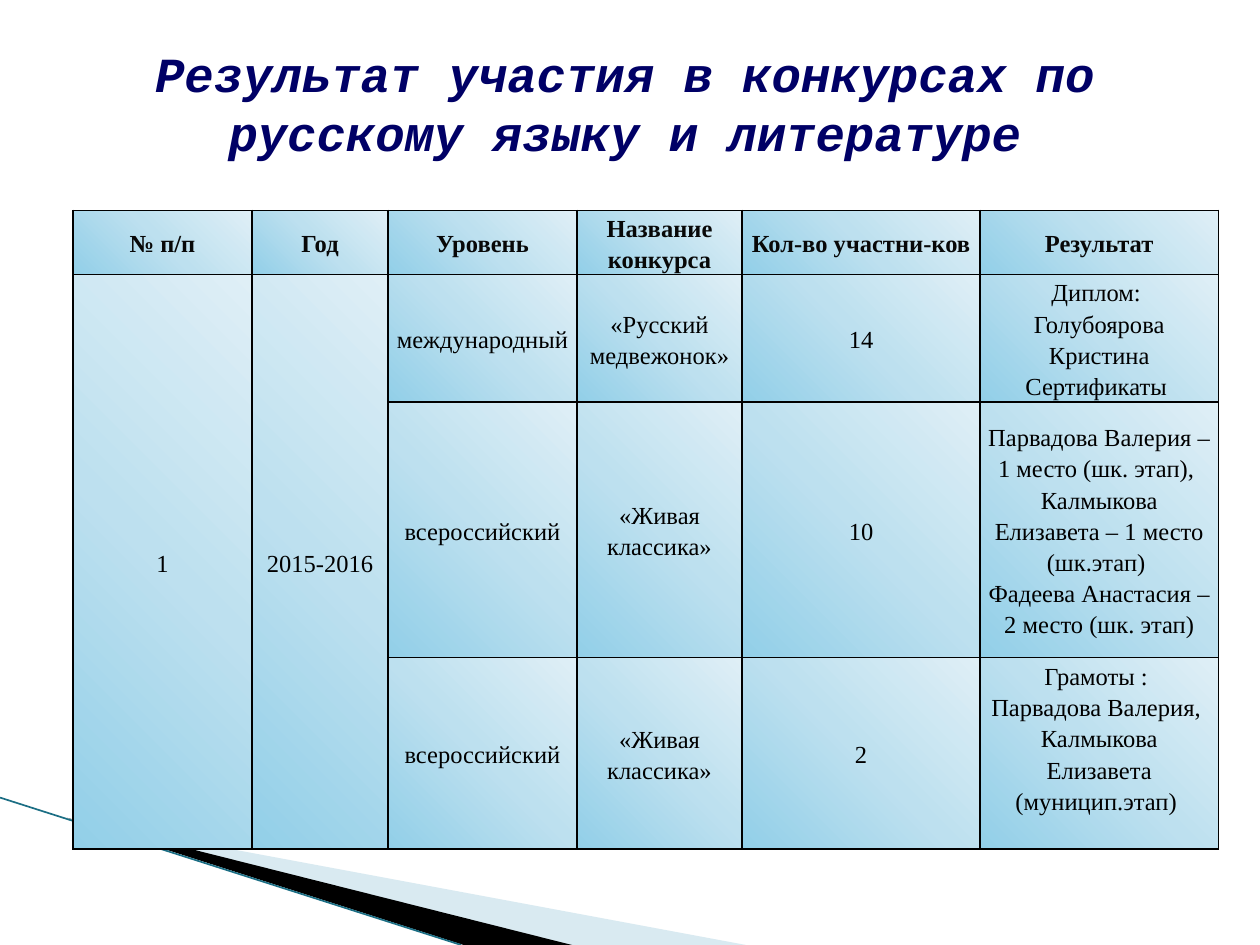
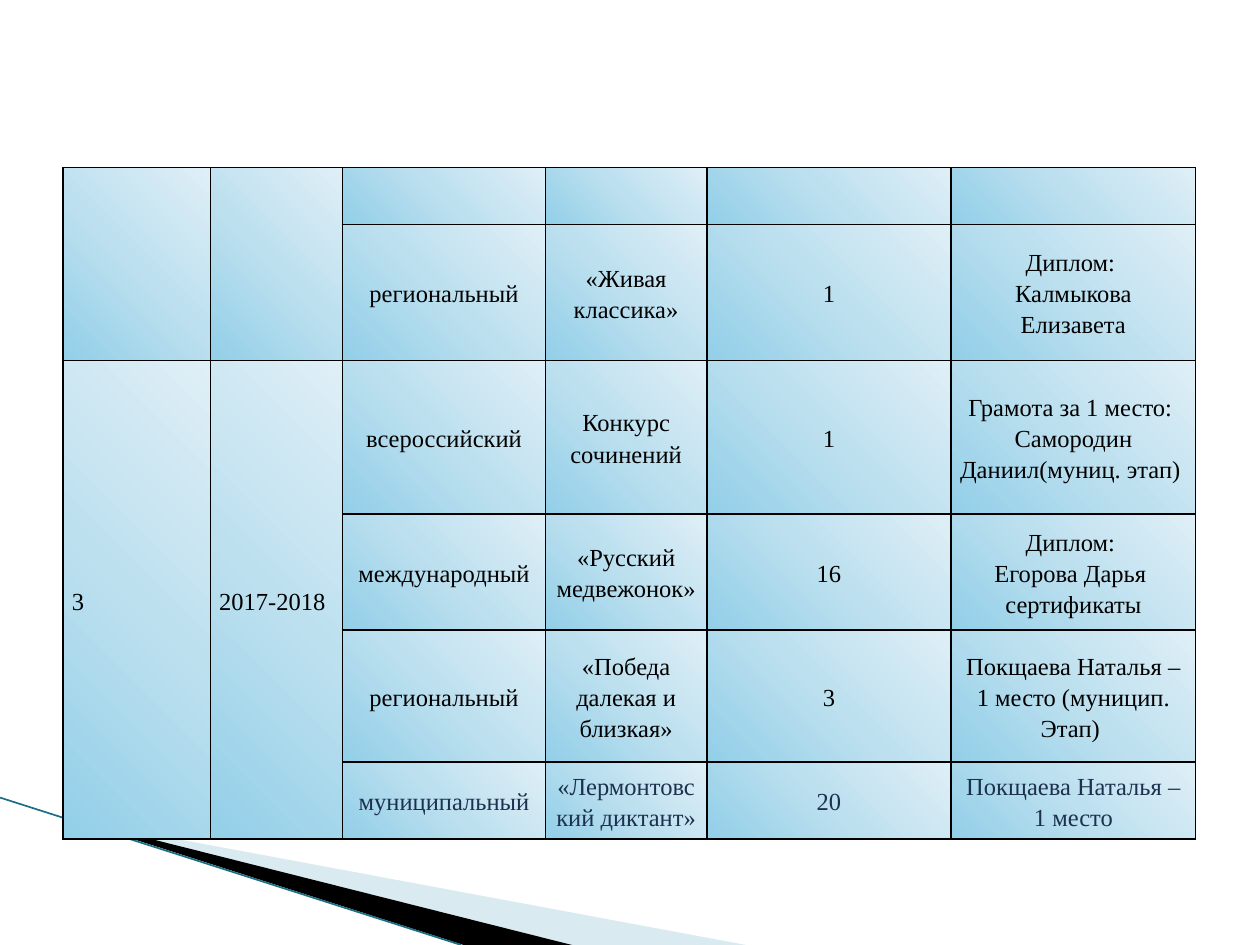
from dataclasses import dataclass
from lxml import etree
from pptx import Presentation
from pptx.dml.color import RGBColor
from pptx.enum.shapes import MSO_CONNECTOR as Connector
from pptx.enum.text import MSO_ANCHOR as Anchor, MSO_AUTO_SIZE as AutoSize, PP_ALIGN as Align
from pptx.oxml import parse_xml
from pptx.oxml.ns import nsdecls, qn
from pptx.util import Inches, Pt

# Content: a cell is a list of paragraphs, None continues the cell above
TITLE = "Результат участия в конкурсах по русскому языку и литературе"
BEAR, CLASSICS = ["«Русский медвежонок»"], ["«Живая классика»"]
WORLD, NATION, REGION = ["международный"], ["всероссийский"], ["региональный"]

RESULTS_2015 = [
    [["№ п/п"], ["Год"], ["Уровень"], ["Название конкурса"], ["Кол-во участни-ков"], ["Результат"]],
    [["1"], ["2015-2016"], WORLD, BEAR, ["14"],
     ["Диплом: ", "Голубоярова Кристина", "Сертификаты "]],
    [None, None, NATION, CLASSICS, ["10"],
     ["Парвадова Валерия – 1 место (шк. этап), ",
      "Калмыкова Елизавета – 1 место (шк.этап) ",
      "Фадеева Анастасия – 2 место (шк. этап)"]],
    [None, None, NATION, CLASSICS, ["2"],
     ["Грамоты : ", "Парвадова Валерия, ", "Калмыкова Елизавета (муницип.этап) "]],
]
RESULTS_2017 = [
    [[], [], [], [], [], []],
    [None, None, REGION, CLASSICS, ["1"], ["Диплом: ", "Калмыкова Елизавета"]],
    [["3"], ["2017-2018"], NATION, ["Конкурс сочинений"], ["1"],
     ["Грамота за 1 место: ", "Самородин Даниил(муниц. этап) "]],
    [None, None, WORLD, BEAR, ["16"], ["Диплом: ", "Егорова Дарья ", "сертификаты"]],
    [None, None, REGION, ["«Победа далекая и близкая»"], ["3"],
     ["Покщаева Наталья – 1 место (муницип. Этап) "]],
    [None, None, ["муниципальный"], ["«Лермонтовский диктант»"], ["20"],
     ["Покщаева Наталья – 1 место"]],
]


@dataclass(frozen=True)
class Theme:
    title_font: str = "Courier New"
    table_font: str = "Times New Roman"
    title_size: int = 28
    table_size: int = 14
    title: str = "000066"
    heading: str = "080808"
    text: str = "000000"
    accent_text: str = "1C314E"
    border: str = "000000"
    gradient: tuple = ((0, "92CFE8"), (50, "BDE0EF"), (100, "DFEFF6"))
    pale_band: str = "A0CBDC"
    dark_band: str = "000000"
    edge_line: str = "1B6E84"


THEME = Theme()
CORNER_GLOW = ('<a:path path="circle"><a:fillToRect l="0" t="100000" r="100000" b="0"/></a:path>')
DIAGONAL = '<a:lin ang="18900000" scaled="0"/>'


def write_text(frame, paragraphs, font, size, color, bold=False, italic=False,
               align=Align.CENTER, spacing=None):
    for index, text in enumerate(paragraphs or [""]):
        paragraph = frame.paragraphs[0] if index == 0 else frame.add_paragraph()
        paragraph.alignment = align
        if spacing:
            paragraph.line_spacing = spacing
        if not text:
            paragraph.font.size = Pt(size)
            continue
        run = paragraph.add_run()
        run.text = text
        run.font.name, run.font.size = font, Pt(size)
        run.font.bold, run.font.italic = bold, italic
        run.font.color.rgb = RGBColor.from_string(color)


# Bands in the lower left corner
def add_band(slide, points, color, opacity=100):
    builder = slide.shapes.build_freeform(*map(Inches, points[0]), scale=1.0)
    builder.add_line_segments([tuple(map(Inches, point)) for point in points[1:]])
    band = builder.convert_to_shape()
    band.shadow.inherit = False
    band.line.fill.background()
    band.fill.solid()
    band.fill.fore_color.rgb = RGBColor.from_string(color)
    if opacity < 100:
        solid_color = band.fill._xPr.find(qn("a:solidFill"))[0]
        etree.SubElement(solid_color, qn("a:alpha"), val=str(opacity * 1000))


def add_corner(slide):
    add_band(slide, [(0.55, 6.5), (5.92, 7.5), (4.53, 7.5)], THEME.pale_band, opacity=40)
    add_band(slide, [(0.53, 6.49), (4.54, 7.5), (3.68, 7.5)], THEME.dark_band)
    edge = slide.shapes.add_connector(
        Connector.STRAIGHT, *map(Inches, (0, 6.33, 3.66, 7.5)))
    edge.line.width = Pt(0.95)
    edge.line.color.rgb = RGBColor.from_string(THEME.edge_line)
    etree.SubElement(edge._element.spPr, qn("a:effectLst"))


# Results table
def paint_cell(cell, gradient_shape):
    properties = cell._tc.get_or_add_tcPr()
    for side in "LRTB":
        properties.append(parse_xml(
            f'<a:ln{side} {nsdecls("a")} w="12700"><a:solidFill>'
            f'<a:srgbClr val="{THEME.border}"/></a:solidFill></a:ln{side}>'))
    stops = "".join(f'<a:gs pos="{position * 1000}"><a:srgbClr val="{color}"/></a:gs>'
                    for position, color in THEME.gradient)
    properties.append(parse_xml(
        f'<a:gradFill {nsdecls("a")} rotWithShape="1"><a:gsLst>{stops}</a:gsLst>'
        f'{gradient_shape}</a:gradFill>'))


def add_results(slide, rows, left, top, widths, heights, gradient_shape, side_margin,
                row_formats, number_align=Align.CENTER):
    frame = slide.shapes.add_table(
        len(rows), len(widths), Inches(left), Inches(top),
        Inches(sum(widths)), Inches(sum(heights)))
    table = frame.table
    table.first_row = table.horz_banding = False
    for column, width in zip(table.columns, widths):
        column.width = Inches(width)
    for row, height in zip(table.rows, heights):
        row.height = Inches(height)
    for row_index, row in enumerate(rows):
        for column_index, paragraphs in enumerate(row):
            cell = table.cell(row_index, column_index)
            cell.margin_left = cell.margin_right = Inches(side_margin)
            cell.margin_top = cell.margin_bottom = 0
            cell.vertical_anchor = Anchor.MIDDLE
            paint_cell(cell, gradient_shape)
            if paragraphs is None:
                continue
            text_format = {"color": THEME.text, **row_formats.get(row_index, {})}
            write_text(cell.text_frame, paragraphs, THEME.table_font, THEME.table_size,
                       align=number_align if column_index < 2 else Align.CENTER,
                       spacing=1.15, **text_format)
            # A cell spans the continuation rows below it
            last = row_index
            while last + 1 < len(rows) and rows[last + 1][column_index] is None:
                last += 1
            if last > row_index:
                cell.merge(table.cell(last, column_index))
    return table


def add_slide(presentation, title=None):
    slide = presentation.slides.add_slide(presentation.slide_layouts[5])
    add_corner(slide)
    holder = slide.shapes.title
    if title is None:
        holder._element.getparent().remove(holder._element)
        return slide
    holder.left, holder.top, holder.width, holder.height = map(Inches, (0.67, 0.25, 8.58, 1.12))
    holder.text_frame.auto_size = AutoSize.NONE
    holder.text_frame.word_wrap = True
    holder.text_frame.vertical_anchor = Anchor.MIDDLE
    write_text(holder.text_frame, [title], THEME.title_font, THEME.title_size, THEME.title,
               bold=True, italic=True)
    return slide


def main():
    presentation = Presentation()
    presentation.slide_width, presentation.slide_height = Inches(10), Inches(7.5)

    first = add_slide(presentation, TITLE)
    table = add_results(
        first, RESULTS_2015, 0.58, 1.67, [1.42, 1.08, 1.5, 1.31, 1.89, 1.89],
        [0.51, 1.01, 2.03, 1.52], CORNER_GLOW, 0.06,
        {0: {"color": THEME.heading, "bold": True}})
    table.cell(3, 5).margin_bottom = Inches(0.25)

    second = add_slide(presentation)
    add_results(
        second, RESULTS_2017, 0.5, 1.33, [1.17, 1.05, 1.61, 1.28, 1.94, 1.94],
        [0.45, 1.08, 1.22, 0.92, 1.05, 0.61], DIAGONAL, 0.07,
        {5: {"color": THEME.accent_text}}, number_align=Align.LEFT)

    presentation.save("out.pptx")


if __name__ == "__main__":
    main()
